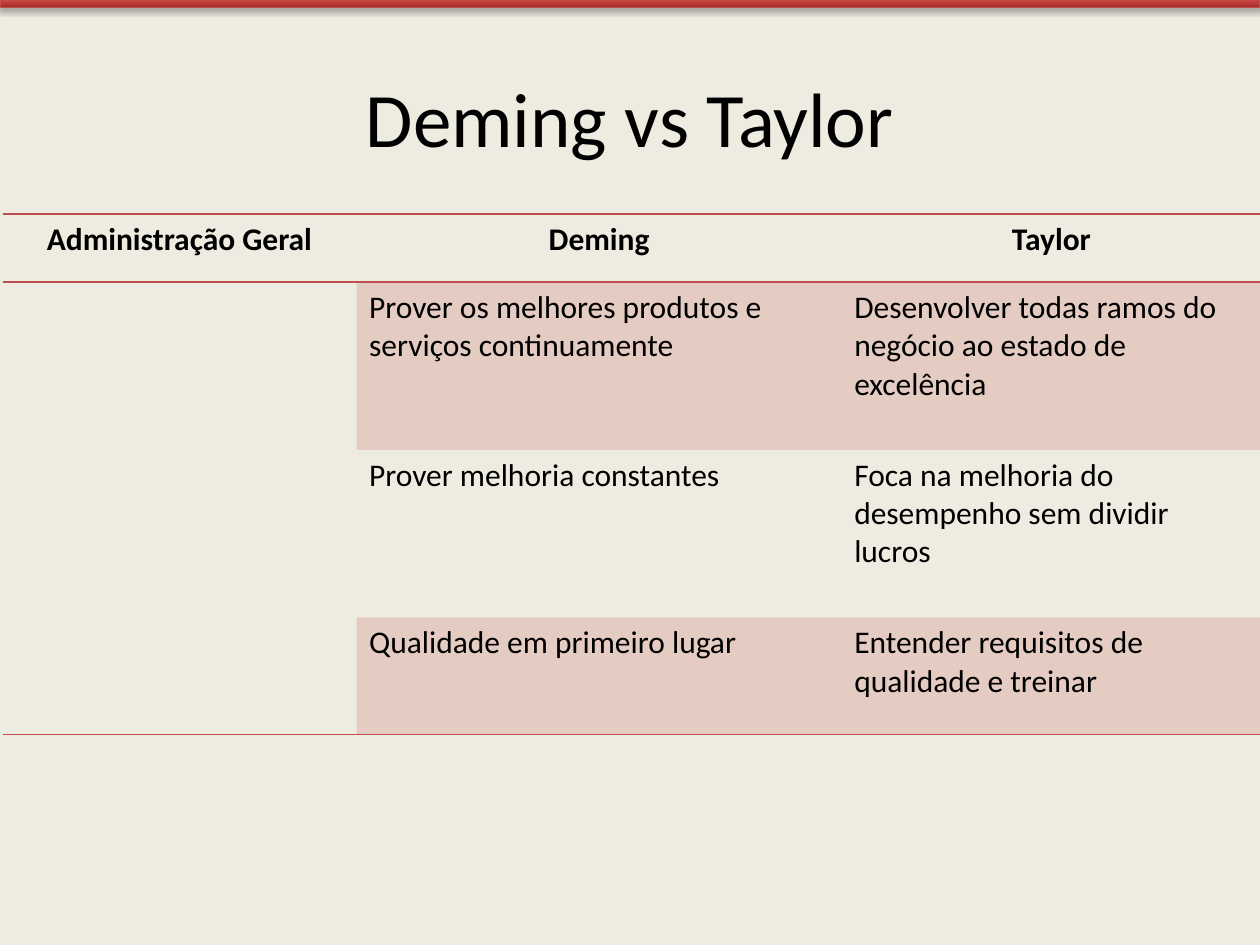
"""Build the slide comparing Deming and Taylor in a table."""
from lxml import etree
from pptx import Presentation
from pptx.dml.color import RGBColor
from pptx.enum.shapes import MSO_SHAPE as Shape
from pptx.enum.text import MSO_ANCHOR as Anchor, PP_ALIGN as Align
from pptx.oxml import parse_xml
from pptx.oxml.ns import nsdecls, qn
from pptx.util import Inches, Pt

RED = "C0504D"
color = RGBColor.from_string


def write(frame, text, size=18, bold=False, align=Align.LEFT):
    para = frame.paragraphs[0]
    para.alignment = align
    span = para.add_run()
    span.text = text
    span.font.name = "Calibri"
    span.font.size = Pt(size)
    span.font.bold = bold
    span.font.color.rgb = color("000000")


def make_border(edge, shown):
    paint = f'<a:solidFill><a:srgbClr val="{RED}"/></a:solidFill>' if shown else "<a:noFill/>"
    width = Pt(1) if shown else 0
    return parse_xml(f'<a:{edge} {nsdecls("a")} w="{width}">{paint}</a:{edge}>')


deck = Presentation()
deck.slide_width, deck.slide_height = Inches(10), Inches(7.5)
page = deck.slides.add_slide(deck.slide_layouts[6])
page.background.fill.solid()
page.background.fill.fore_color.rgb = color("EEECE1")

bar = page.shapes.add_shape(Shape.RECTANGLE, 0, 0, Inches(10), Inches(0.06))
bar.line.color.rgb = color("BF4C48")
bar.line.width = Pt(0.75)
stops = "".join(
    f'<a:gs pos="{place * 1000}"><a:srgbClr val="{tint}"/></a:gs>'
    for place, tint in [(0, "9C2F2D"), (80, "CB3E3A"), (100, "CE3B37")]
)
gradient = parse_xml(
    f'<a:gradFill {nsdecls("a")} rotWithShape="1"><a:gsLst>{stops}</a:gsLst>'
    '<a:lin ang="16200000" scaled="0"/></a:gradFill>'
)
shadow = parse_xml(
    f'<a:effectLst {nsdecls("a")}><a:outerShdw blurRad="{Pt(3.1)}" dist="{Pt(1.8)}" '
    'dir="5400000" rotWithShape="0"><a:srgbClr val="000000"><a:alpha val="35000"/>'
    '</a:srgbClr></a:outerShdw></a:effectLst>'
)
bar_format = bar.element.spPr
bar_format.find(qn("a:prstGeom")).addnext(gradient)
bar_format.append(shadow)

title = page.shapes.add_textbox(Inches(0.5), Inches(0.3), Inches(9), Inches(1.25))
title.text_frame.word_wrap = True
title.text_frame.vertical_anchor = Anchor.MIDDLE
write(title.text_frame, "Deming vs Taylor", size=44, align=Align.CENTER)

rows = [
    ["Administração Geral", "Deming", "Taylor"],
    ["", "Prover os melhores produtos e serviços continuamente",
     "Desenvolver todas ramos do negócio ao estado de excelência"],
    ["", "Prover melhoria constantes", "Foca na melhoria do desempenho sem dividir lucros"],
    ["", "Qualidade em primeiro lugar", "Entender requisitos de qualidade e treinar"],
]
table = page.shapes.add_table(
    4, 3, Inches(0.02), Inches(1.7), Inches(9.98), Inches(4.13)
).table
table.horz_banding = False
table.first_row = False
for column, width in zip(table.columns, [2.81, 3.85, 3.33]):
    column.width = Inches(width)
for row, height in zip(table.rows, [0.54, 1.33, 1.33, 0.93]):
    row.height = Inches(height)
table.cell(1, 0).merge(table.cell(3, 0))

for r, texts in enumerate(rows):
    for c, text in enumerate(texts):
        cell = table.cell(r, c)
        if text:
            write(cell.text_frame, text, bold=r == 0,
                  align=Align.CENTER if r == 0 else Align.LEFT)
        cell_format = cell._tc.get_or_add_tcPr()
        if r % 2 and c:
            cell.fill.solid()
            cell.fill.fore_color.rgb = color(RED)
            tint = cell_format.find(".//" + qn("a:srgbClr"))
            etree.SubElement(tint, qn("a:alpha")).set("val", "20000")
        else:
            cell.fill.background()
        edges = {
            "lnL": False,
            "lnR": False,
            "lnT": r < 2,
            "lnB": r in (0, 3) or cell.is_merge_origin,
        }
        for place, (edge, shown) in enumerate(edges.items()):
            cell_format.insert(place, make_border(edge, shown))

deck.save("out.pptx")
